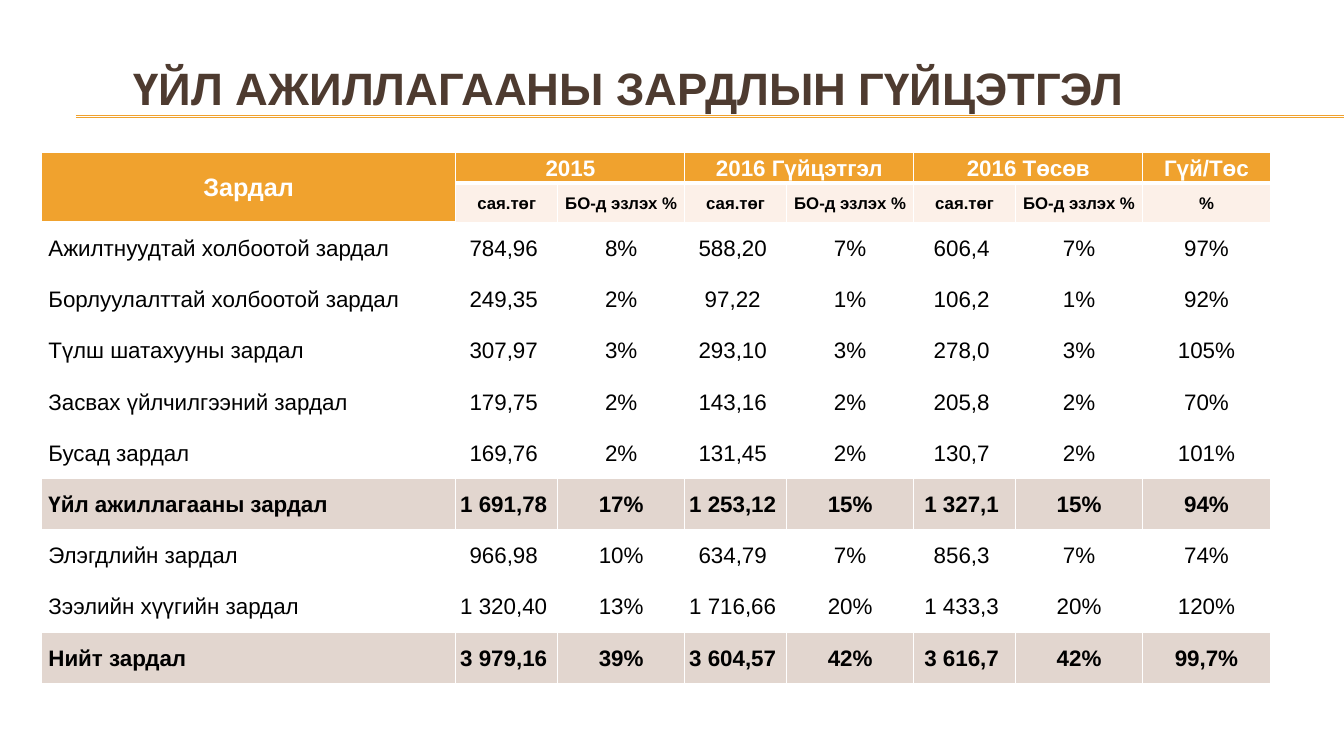
from lxml import etree
from pptx import Presentation
from pptx.dml.color import RGBColor
from pptx.enum import shapes, text
from pptx.oxml import ns
from pptx.util import Cm, Pt

FONT = "Arial"
ORANGE, CREAM, BEIGE = "F0A22E", "FCF0E8", "E2D6CF"
BROWN, WHITE, BLACK = "4E3B30", "FFFFFF", "000000"

AMOUNT_WIDTH, SHARE_WIDTH = 2.56, 3.21
COLUMN_WIDTHS = [10.45] + [AMOUNT_WIDTH, SHARE_WIDTH] * 3 + [SHARE_WIDTH]
AMOUNT_COLUMNS = (1, 3, 5)
HEADER_HEIGHTS, BODY_HEIGHT = [0.78, 0.99], 1.29

GROUPS = ["Зардал", "2015", "", "2016 Гүйцэтгэл", "", "2016 Төсөв", "", "Гүй/Төс"]
UNITS = [""] + ["сая.төг", "БО-д эзлэх %"] * 3 + ["%"]
EXPENSES = [
    ["Ажилтнуудтай холбоотой зардал", "784,96", "8%", "588,20", "7%", "606,4", "7%", "97%"],
    ["Борлуулалттай холбоотой зардал", "249,35", "2%", "97,22", "1%", "106,2", "1%", "92%"],
    ["Түлш шатахууны зардал", "307,97", "3%", "293,10", "3%", "278,0", "3%", "105%"],
    ["Засвах үйлчилгээний зардал", "179,75", "2%", "143,16", "2%", "205,8", "2%", "70%"],
    ["Бусад зардал", "169,76", "2%", "131,45", "2%", "130,7", "2%", "101%"],
    ["Үйл ажиллагааны зардал", "1 691,78", "17%", "1 253,12", "15%", "1 327,1", "15%", "94%"],
    ["Элэгдлийн зардал", "966,98", "10%", "634,79", "7%", "856,3", "7%", "74%"],
    ["Зээлийн хүүгийн зардал", "1 320,40", "13%", "1 716,66", "20%", "1 433,3", "20%", "120%"],
    ["Нийт зардал", "3 979,16", "39%", "3 604,57", "42%", "3 616,7", "42%", "99,7%"],
]
TOTALS = ("Үйл ажиллагааны зардал", "Нийт зардал")


def rgb(color):
    return RGBColor.from_string(color)


def write(frame, words, size, color, bold, align):
    frame.text = words
    para = frame.paragraphs[0]
    para.alignment = align
    for span in para.runs:
        span.font.name, span.font.size, span.font.bold = FONT, Pt(size), bold
        span.font.color.rgb = rgb(color)


def add_title(page, words):
    box = page.shapes.add_textbox(Cm(3.12), Cm(0.76), Cm(26.92), Cm(2.87))
    box.text_frame.word_wrap = True
    box.text_frame.vertical_anchor = text.MSO_ANCHOR.MIDDLE
    write(box.text_frame, words, 32.4, BROWN, True, text.PP_ALIGN.LEFT)


def add_rule(page, top):
    rule = page.shapes.add_connector(
        shapes.MSO_CONNECTOR.STRAIGHT, Cm(1.91), Cm(top), Cm(33.87), Cm(top))
    rule.line.color.rgb = rgb(ORANGE)
    rule.line.width = Pt(0.75)
    etree.SubElement(rule.element.spPr, ns.qn("a:effectLst"))


def set_borders(cell, bottom):
    properties = cell._tc.get_or_add_tcPr()
    for side, width in (("L", 1), ("R", 1), ("T", 1), ("B", bottom)):
        line = etree.SubElement(properties, ns.qn("a:ln" + side), w=str(Pt(width)))
        fill = etree.SubElement(line, ns.qn("a:solidFill"))
        etree.SubElement(fill, ns.qn("a:srgbClr"), val=WHITE)


def fill_cell(cell, words, size, color, bold, background, align, bottom=1):
    set_borders(cell, bottom)
    if background:
        cell.fill.solid()
        cell.fill.fore_color.rgb = rgb(background)
    else:
        cell.fill.background()
    cell.vertical_anchor = text.MSO_ANCHOR.MIDDLE
    cell.margin_left = cell.margin_right = cell.margin_top = Cm(0.03)
    cell.margin_bottom = 0
    write(cell.text_frame, words, size, color, bold, align)


def add_expense_table(page):
    heights = HEADER_HEIGHTS + [BODY_HEIGHT] * len(EXPENSES)
    table = page.shapes.add_table(
        len(heights), len(COLUMN_WIDTHS), Cm(1.04), Cm(3.84),
        Cm(sum(COLUMN_WIDTHS)), Cm(sum(heights))).table
    table.first_row = table.horz_banding = False
    for column, width in zip(table.columns, COLUMN_WIDTHS):
        column.width = Cm(width)
    for row, height in zip(table.rows, heights):
        row.height = Cm(height)

    # Two header rows
    center, left = text.PP_ALIGN.CENTER, text.PP_ALIGN.LEFT
    for index, (group, unit) in enumerate(zip(GROUPS, UNITS)):
        fill_cell(table.cell(0, index), group, 16 if index else 18, WHITE, True,
                  ORANGE, center, bottom=3)
        fill_cell(table.cell(1, index), unit, 12, BLACK, True,
                  CREAM if index else ORANGE, center)
    table.cell(0, 0).merge(table.cell(1, 0))
    for index in AMOUNT_COLUMNS:
        table.cell(0, index).merge(table.cell(0, index + 1))

    # Expense rows, with shaded totals
    for row, values in enumerate(EXPENSES, start=len(HEADER_HEIGHTS)):
        total = values[0] in TOTALS
        for index, value in enumerate(values):
            cell = table.cell(row, index)
            fill_cell(cell, value, 16, BLACK, total, BEIGE if total else None,
                      center if index else left)
            if index == 0:
                cell.margin_left = Cm(0.18)
            elif index in AMOUNT_COLUMNS:
                cell.margin_right = Cm(0.18)


def main():
    deck = Presentation()
    deck.slide_width, deck.slide_height = Cm(33.87), Cm(19.05)
    page = deck.slides.add_slide(deck.slide_layouts[6])
    # Double rule under the title
    for top in (2.92, 2.95):
        add_rule(page, top)
    add_title(page, "ҮЙЛ АЖИЛЛАГААНЫ ЗАРДЛЫН ГҮЙЦЭТГЭЛ")
    add_expense_table(page)
    deck.save("out.pptx")


if __name__ == "__main__":
    main()
